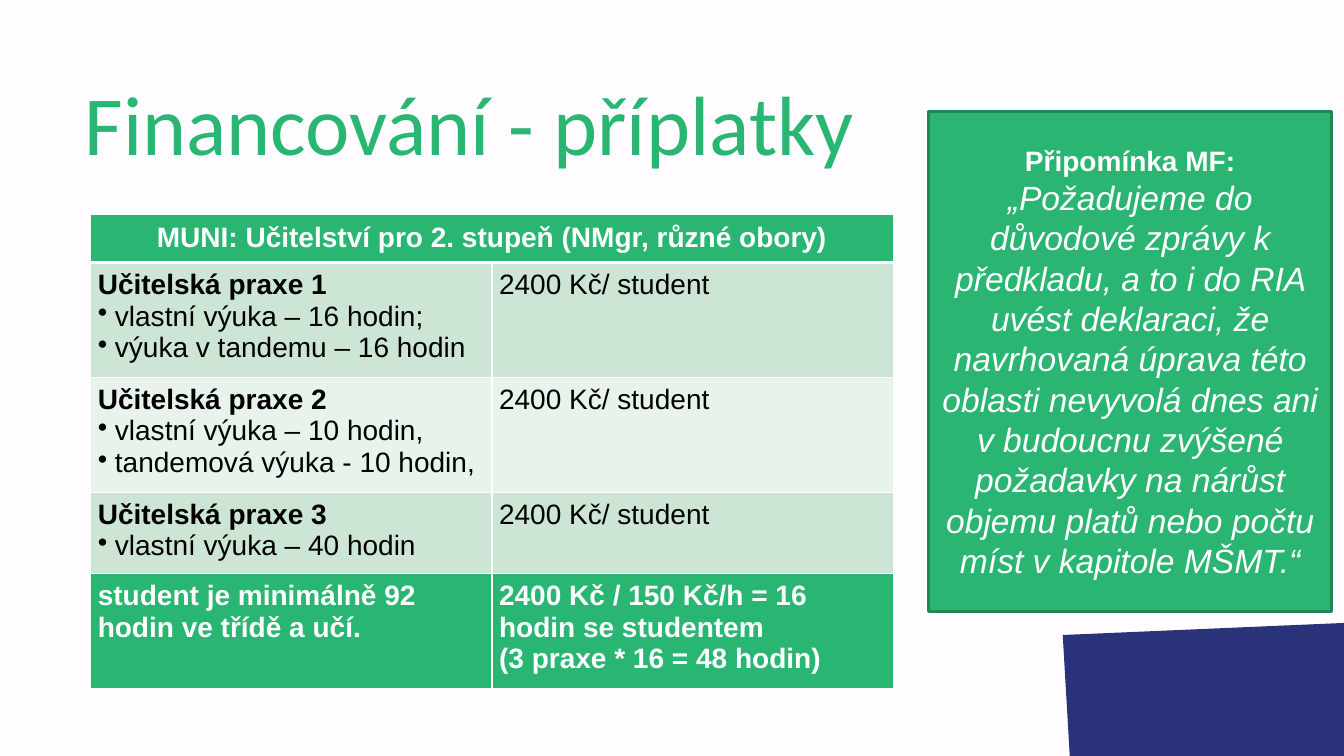
"""Build the slide on financing supplements for teaching practice."""
import pptx
import pptx.dml.color
import pptx.enum.shapes
import pptx.enum.text
import pptx.oxml.ns
import pptx.util
from lxml import etree

Inches = pptx.util.Inches
Pt = pptx.util.Pt
ALIGN = pptx.enum.text.PP_ALIGN
ANCHOR = pptx.enum.text.MSO_ANCHOR

COLOURS = {
    "background": "FFFDFF", "green": "29B673", "panel": "2AB573",
    "panel_line": "1F8655", "navy": "2A337A", "band": "CDE5D5",
    "light_band": "E8F3EB", "white": "FFFFFF", "black": "000000",
}
TITLE = "Financování - příplatky"
TABLE_HEADING = "MUNI: Učitelství pro 2. stupeň (NMgr, různé obory)"
RATE = "2400 Kč/ student"
PRACTICES = [
    ("Učitelská praxe 1", ["vlastní výuka – 16 hodin;", "výuka v tandemu – 16 hodin"]),
    ("Učitelská praxe 2", ["vlastní výuka – 10 hodin,", "tandemová výuka - 10 hodin,"]),
    ("Učitelská praxe 3", ["vlastní výuka – 40 hodin"]),
]
TOTALS = [
    ["student je minimálně 92 hodin ve třídě a učí."],
    ["2400 Kč / 150 Kč/h = 16 hodin se studentem", "(3 praxe * 16 = 48 hodin)"],
]
COMMENT_HEADING = "Připomínka MF:"
COMMENT = (
    "„Požadujeme do důvodové zprávy k předkladu, a to i do RIA uvést deklaraci, "
    "že navrhovaná úprava této oblasti nevyvolá dnes ani v budoucnu zvýšené "
    "požadavky na nárůst objemu platů nebo počtu míst v kapitole MŠMT.“"
)
TABLE_BOX = (0.9, 2.13, 7.96, 4.4)
ROW_HEIGHTS = [0.45, 1.06, 1.07, 0.76, 1.06]
COMMENT_BOX = (9.21, 1.11, 4, 4.96)
TITLE_BOX = (0.74, 0.77, 8.3, 1.1)
CORNER = [(10.54, 6.3), (13.33, 6.18), (13.33, 7.5), (10.61, 7.5)]


def colour(name):
    """Return the named colour."""
    return pptx.dml.color.RGBColor.from_string(COLOURS[name])


def paint(target, name):
    """Give a shape, cell or background a solid fill."""
    target.fill.solid()
    target.fill.fore_color.rgb = colour(name)


def write(frame, text, size=20, font="Arial", ink="black", bold=False,
          italic=False, align=ALIGN.LEFT, bullet=False, spacing=None):
    """Write one paragraph into a text frame."""
    paragraph = frame.paragraphs[0]
    if paragraph.runs:
        paragraph = frame.add_paragraph()
    paragraph.alignment = align
    if spacing:
        paragraph.line_spacing = spacing
    if bullet:
        properties = paragraph._p.get_or_add_pPr()
        properties.set("marL", str(Inches(0.17)))
        properties.set("indent", str(-Inches(0.17)))
        etree.SubElement(properties, pptx.oxml.ns.qn("a:buChar"), char="•")
    run = paragraph.add_run()
    run.text = text
    run.font.size = Pt(size)
    run.font.name = font
    run.font.bold = bold
    run.font.italic = italic
    run.font.color.rgb = colour(ink)


def style_cell(cell, fill, top=1, bottom=1):
    """Set the margins, white borders and fill of a table cell."""
    cell.margin_left = cell.margin_right = Inches(0.07)
    cell.margin_top = cell.margin_bottom = Inches(0.07)
    properties = cell._tc.get_or_add_tcPr()
    for side, width in (("L", 1), ("R", 1), ("T", top), ("B", bottom)):
        line = etree.SubElement(properties, pptx.oxml.ns.qn(f"a:ln{side}"), w=str(Pt(width)))
        solid = etree.SubElement(line, pptx.oxml.ns.qn("a:solidFill"))
        etree.SubElement(solid, pptx.oxml.ns.qn("a:srgbClr"), val=COLOURS["white"])
    paint(cell, fill)


def add_corner(slide):
    """Draw the navy corner."""
    points = [(Inches(x), Inches(y)) for x, y in CORNER]
    builder = slide.shapes.build_freeform(*points[0])
    builder.add_line_segments(points[1:], close=True)
    shape = builder.convert_to_shape()
    shape.shadow.inherit = False
    paint(shape, "navy")
    shape.line.fill.background()


def add_title(slide):
    """Write the slide title."""
    box = slide.shapes.add_textbox(*map(Inches, TITLE_BOX))
    box.text_frame.word_wrap = True
    write(box.text_frame, TITLE, size=60, font="Calibri", ink="green", spacing=0.9)


def add_practice_table(slide):
    """Build the table of practices and their rates."""
    frame = slide.shapes.add_table(len(ROW_HEIGHTS), 2, *map(Inches, TABLE_BOX))
    table = frame.table
    for row, height in zip(table.rows, ROW_HEIGHTS):
        row.height = Inches(height)
    last = len(ROW_HEIGHTS) - 1
    for index in range(len(ROW_HEIGHTS)):
        fill = "green" if index in (0, last) else ("light_band", "band")[index % 2]
        for column in range(2):
            style_cell(table.cell(index, column), fill,
                       top=3 if index == 1 else 1, bottom=3 if index == 0 else 1)
    table.cell(0, 0).merge(table.cell(0, 1))
    write(table.cell(0, 0).text_frame, TABLE_HEADING, ink="white", bold=True,
          align=ALIGN.CENTER)
    for index, (name, lessons) in enumerate(PRACTICES, 1):
        practice = table.cell(index, 0).text_frame
        write(practice, name, bold=True)
        for lesson in lessons:
            write(practice, lesson, bullet=True)
        write(table.cell(index, 1).text_frame, RATE)
    for column, lines in enumerate(TOTALS):
        for line in lines:
            write(table.cell(last, column).text_frame, line, ink="white", bold=True)


def add_comment(slide):
    """Draw the green panel with the ministry's comment."""
    panel = slide.shapes.add_shape(
        pptx.enum.shapes.MSO_SHAPE.RECTANGLE, *map(Inches, COMMENT_BOX))
    panel.shadow.inherit = False
    paint(panel, "panel")
    panel.line.color.rgb = colour("panel_line")
    panel.line.width = Pt(2)
    panel.text_frame.word_wrap = True
    panel.text_frame.vertical_anchor = ANCHOR.MIDDLE
    write(panel.text_frame, COMMENT_HEADING, ink="white", bold=True, align=ALIGN.CENTER)
    write(panel.text_frame, COMMENT, size=24, ink="white", italic=True, align=ALIGN.CENTER)


def main():
    """Create and save the presentation."""
    presentation = pptx.Presentation()
    presentation.slide_width = Inches(13.33)
    presentation.slide_height = Inches(7.5)
    slide = presentation.slides.add_slide(presentation.slide_layouts[6])
    paint(slide.background, "background")
    add_corner(slide)
    add_title(slide)
    add_practice_table(slide)
    add_comment(slide)
    presentation.save("out.pptx")


if __name__ == "__main__":
    main()
